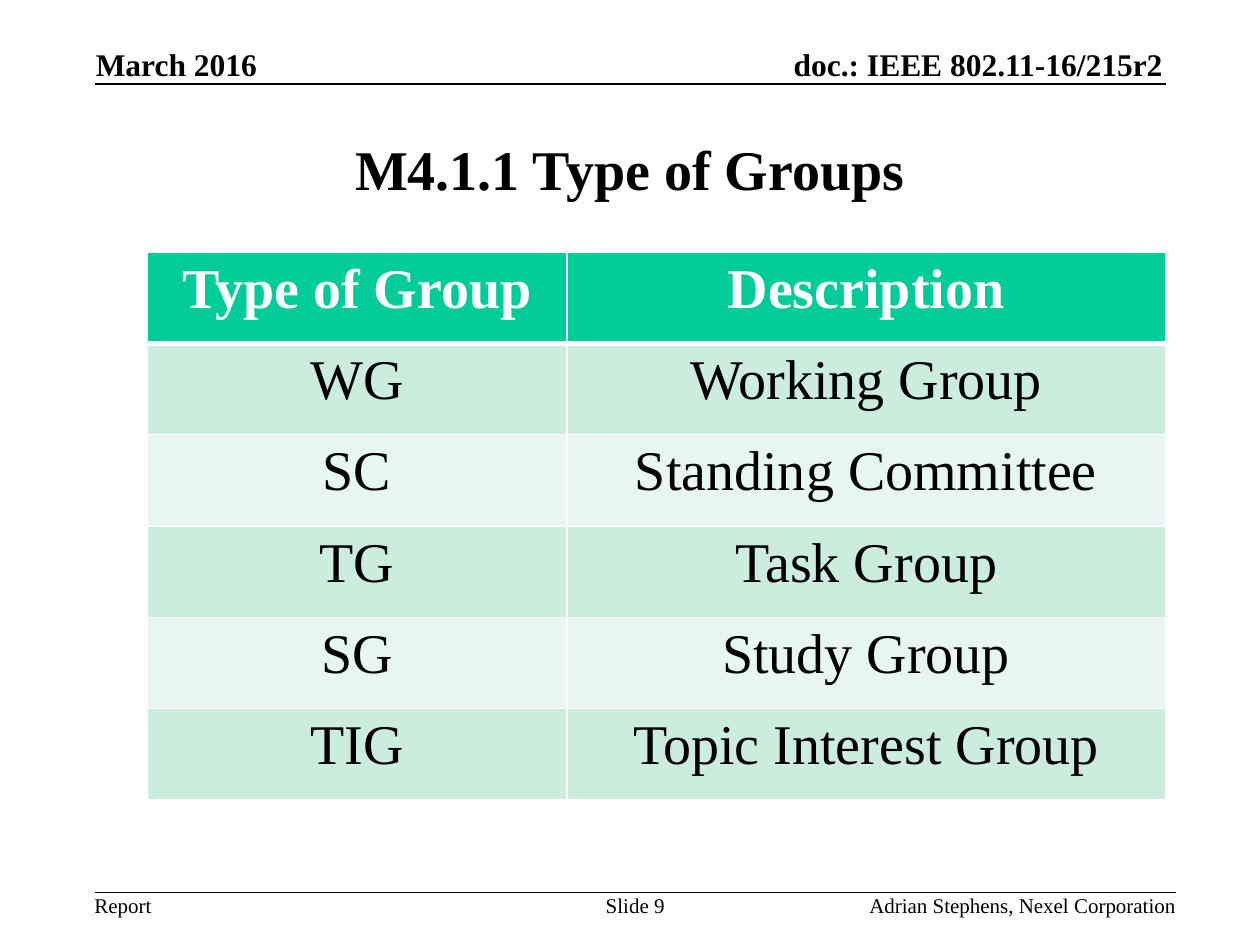
import pptx
import pptx.util
import pptx.dml.color
import pptx.enum.shapes
import pptx.enum.text
import pptx.oxml
import pptx.oxml.ns

Pt = pptx.util.Pt
ALIGN = pptx.enum.text.PP_ALIGN
ANCHOR = pptx.enum.text.MSO_ANCHOR
FONT = "Times New Roman"
COLORS = {"text": "000000", "paper": "FFFFFF", "header": "00CC99",
          "odd": "CCECDE", "even": "E7F6EF"}
GROUPS = [
    ("Type of Group", "Description"),
    ("WG", "Working Group"),
    ("SC", "Standing Committee"),
    ("TG", "Task Group"),
    ("SG", "Study Group"),
    ("TIG", "Topic Interest Group"),
]


def rgb(name):
    """Return the named colour."""
    return pptx.dml.color.RGBColor.from_string(COLORS[name])


def style(p, size, color="text", bold=False, align=ALIGN.LEFT):
    """Format a whole paragraph."""
    p.alignment = align
    p.font.name = FONT
    p.font.size = Pt(size)
    p.font.bold = bold
    p.font.color.rgb = rgb(color)


def add_label(slide, text, box, size, bold, align, anchor):
    """Place one line of text without margins in the box."""
    tf = slide.shapes.add_textbox(*map(Pt, box)).text_frame
    tf.word_wrap = True
    tf.margin_left = tf.margin_right = tf.margin_top = tf.margin_bottom = 0
    tf.vertical_anchor = anchor
    tf.text = text
    style(tf.paragraphs[0], size, bold=bold, align=align)


def add_rule(slide, left, right, y):
    """Draw a thin horizontal rule."""
    line = slide.shapes.add_connector(
        pptx.enum.shapes.MSO_CONNECTOR.STRAIGHT, Pt(left), Pt(y), Pt(right), Pt(y))
    line.line.color.rgb = rgb("text")
    line.line.width = Pt(1)
    pptx.oxml.ns.qn("a:effectLst")
    line._element.spPr.append(pptx.oxml.parse_xml(
        f'<a:effectLst {pptx.oxml.ns.nsdecls("a")}/>'))


def add_header(slide, left, top, width, height):
    """Place the date and document number above a rule."""
    half = width / 2
    add_label(slide, "March 2016", (left + 0.75, top, half, height),
              18, True, ALIGN.LEFT, ANCHOR.BOTTOM)
    add_label(slide, "doc.: IEEE 802.11-16/215r2", (left + half, top, half - 1.5, height),
              18, True, ALIGN.RIGHT, ANCHOR.BOTTOM)
    add_rule(slide, left, left + width, top + height + 0.5)


def add_footer(slide, left, top, width, height):
    """Place the report name, slide number and author below a rule."""
    add_rule(slide, left, left + width, top)
    add_label(slide, "Report", (left, top, 100, height),
              12, False, ALIGN.LEFT, ANCHOR.TOP)
    add_label(slide, "Slide 9", (left + 259, top, 100, height),
              12, False, ALIGN.CENTER, ANCHOR.TOP)
    add_label(slide, "Adrian Stephens, Nexel Corporation",
              (left + width - 250, top, 250, height),
              12, False, ALIGN.RIGHT, ANCHOR.TOP)


def add_title(slide, text, left, top, width, height):
    """Move and format the title placeholder."""
    sp = slide.shapes.title
    sp.left, sp.top, sp.width, sp.height = map(Pt, (left, top, width, height))
    sp.text_frame.text = text
    sp.text_frame.vertical_anchor = ANCHOR.MIDDLE
    style(sp.text_frame.paragraphs[0], 32, bold=True, align=ALIGN.CENTER)


def add_borders(cell, top, bottom):
    """Give a cell white borders with the top and bottom widths in points."""
    sides = {"L": 1, "R": 1, "T": top, "B": bottom}
    tc_pr = cell._tc.get_or_add_tcPr()
    for i, (side, width) in enumerate(sides.items()):
        tc_pr.insert(i, pptx.oxml.parse_xml(
            f'<a:ln{side} {pptx.oxml.ns.nsdecls("a")} w="{Pt(width)}"><a:solidFill>'
            f'<a:srgbClr val="{COLORS["paper"]}"/></a:solidFill></a:ln{side}>'))


def add_group_table(slide, rows, left, top, width, height):
    """Place the table of group types with a header and banded rows."""
    box = map(Pt, (left, top, width, height))
    table = slide.shapes.add_table(len(rows), len(rows[0]), *box).table
    table.columns[0].width = Pt(240)
    table.columns[1].width = Pt(width - 240)
    for i, row in enumerate(rows):
        head = i == 0
        fill = "header" if head else ("even", "odd")[i % 2]
        for j, text in enumerate(row):
            cell = table.cell(i, j)
            cell.text = text
            cell.fill.solid()
            cell.fill.fore_color.rgb = rgb(fill)
            style(cell.text_frame.paragraphs[0], 32, "paper" if head else "text",
                  head, ALIGN.CENTER)
            add_borders(cell, 3 if i == 1 else 1, 3 if head else 1)


def main():
    """Build and save the slide."""
    prs = pptx.Presentation()
    prs.slide_width, prs.slide_height = Pt(720), Pt(540)
    slide = prs.slides.add_slide(prs.slide_layouts[5])
    add_header(slide, 54, 26, 612, 21.5)
    add_title(slide, "M4.1.1 Type of Groups", 54, 54, 612, 84)
    add_group_table(slide, GROUPS, 84, 144, 582, 313.2)
    add_footer(slide, 54, 510, 618, 14.5)
    prs.save("out.pptx")


if __name__ == "__main__":
    main()
